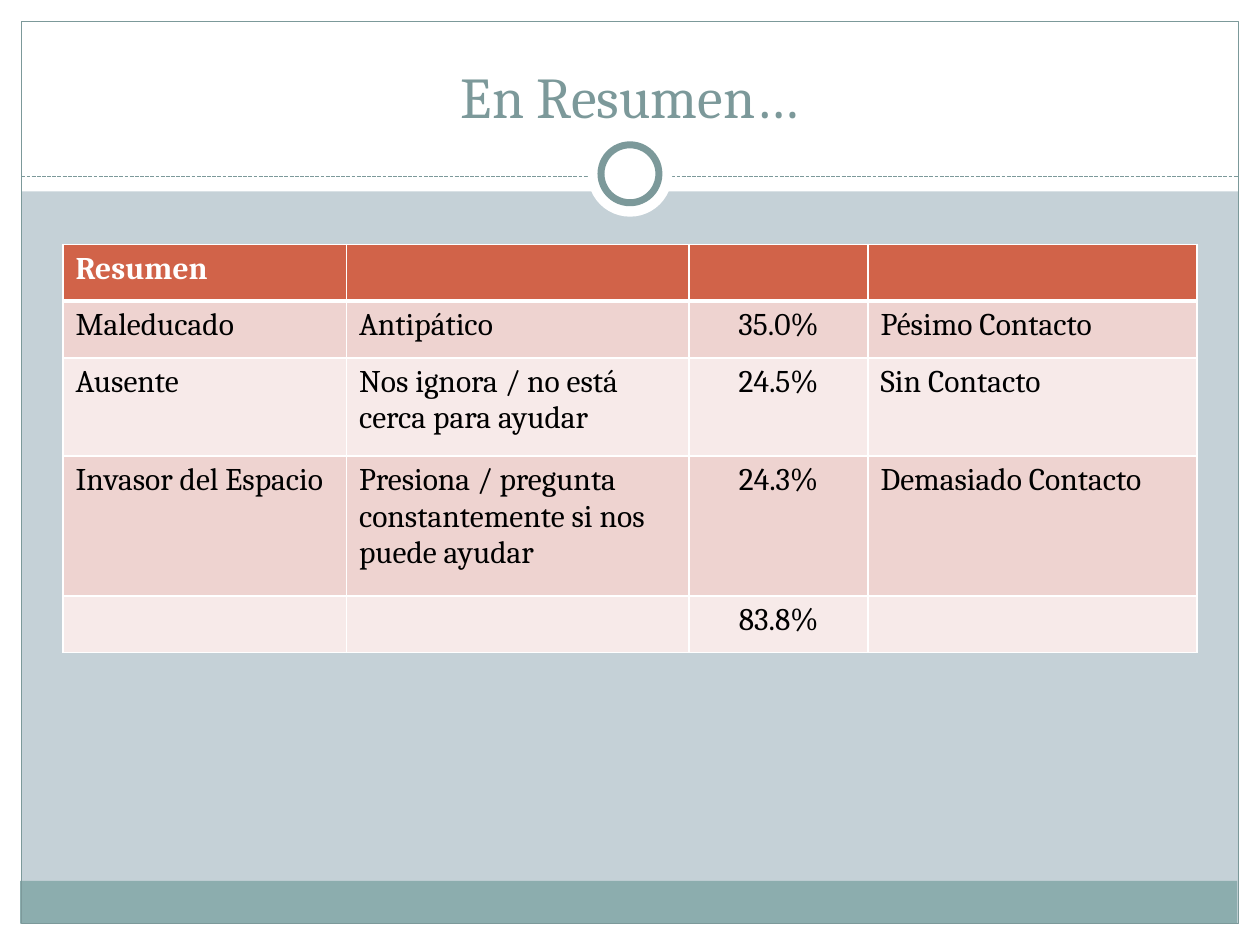
from dataclasses import dataclass
from lxml.etree import SubElement
from pptx import Presentation
from pptx.dml.color import RGBColor as RGB
from pptx.enum.dml import MSO_LINE_DASH_STYLE as DASH
from pptx.enum.shapes import MSO_CONNECTOR as CONN, MSO_SHAPE as SHAPE
from pptx.enum.text import MSO_ANCHOR as ANCHOR, PP_ALIGN as ALIGN
from pptx.oxml.ns import qn
from pptx.util import Inches, Pt


@dataclass(frozen=True)
class Theme:
    font: str = "Cambria"
    title_size: int = 33
    body_size: int = 18
    white: str = "FFFFFF"
    black: str = "000000"
    back: str = "C5D1D7"
    accent: str = "7C999A"
    footer: str = "8CADAE"
    header: str = "D16349"
    bands: tuple = ("EED3D0", "F7EAE9")


theme = Theme()
prs = Presentation()
prs.slide_width, prs.slide_height = Inches(10), Inches(7.5)
s = prs.slides.add_slide(prs.slide_layouts[6])
s.background.fill.solid()
s.background.fill.fore_color.rgb = RGB.from_string(theme.back)


def share(x, y, *size):
    sides = (prs.slide_width, prs.slide_height) * 2
    return [round(side * pct / 100) for side, pct in zip(sides, (x, y, *size))]


def style_run(r, size, color, bold=False):
    r.font.name, r.font.size, r.font.bold = theme.font, Pt(size), bold
    r.font.color.rgb = RGB.from_string(color)


shapes = [
    (SHAPE.RECTANGLE, (0, 97.73, 100, 2.27), theme.white, 0),
    (SHAPE.RECTANGLE, (0, 0, 100, 20.27), theme.white, 0),
    (SHAPE.RECTANGLE, (0, 0, 1.7, 100), theme.white, 0),
    (SHAPE.RECTANGLE, (98.3, 0, 1.7, 100), theme.white, 0),
    (SHAPE.RECTANGLE, (1.6, 93.2, 96.6, 4.53), theme.footer, 0),
    (SHAPE.RECTANGLE, (1.7, 2.27, 96.6, 95.47), None, 0.75),
    (SHAPE.OVAL, (46.65, 14, 6.7, 8.93), theme.white, 0),
    (SHAPE.OVAL, (47.7, 15.33, 4.6, 6.13), theme.white, 4),
]
for kind, place, color, width in shapes:
    if kind == SHAPE.OVAL and not width:
        rule = s.shapes.add_connector(CONN.STRAIGHT, *share(1.7, 18.67, 98.3, 18.67))
        rule.line.color.rgb = RGB.from_string(theme.accent)
        rule.line.width = Pt(0.75)
        rule.line.dash_style = DASH.SQUARE_DOT
        SubElement(rule._element.spPr, qn("a:effectLst"))
    sp = s.shapes.add_shape(kind, *share(*place))
    sp.shadow.inherit = False
    if color:
        sp.fill.solid()
        sp.fill.fore_color.rgb = RGB.from_string(color)
    else:
        sp.fill.background()
    if width:
        sp.line.color.rgb = RGB.from_string(theme.accent)
        sp.line.width = Pt(width)
    else:
        sp.line.fill.background()

title = s.shapes.add_textbox(*share(3.35, 3.33, 93.3, 11.07))
tf = title.text_frame
tf.word_wrap = True
tf.vertical_anchor = ANCHOR.BOTTOM
tf.text = "En Resumen…"
p = tf.paragraphs[0]
p.alignment = ALIGN.CENTER
style_run(p.runs[0], theme.title_size, theme.accent)

rows = [
    ("Resumen", "", "", ""),
    ("Maleducado", "Antipático", "35.0%", "Pésimo Contacto"),
    ("Ausente", "Nos ignora / no está cerca para ayudar", "24.5%", "Sin Contacto"),
    ("Invasor del Espacio", "Presiona / pregunta constantemente si nos puede ayudar",
     "24.3%", "Demasiado Contacto"),
    ("", "", "83.8%", ""),
]
col_shares = (22.5, 27.2, 14.2, 26.1)
row_shares = (6, 6, 10.4, 14.8, 6)
table = s.shapes.add_table(
    len(rows), len(col_shares), *share(5, 25.87, sum(col_shares), sum(row_shares))
).table
for col, width in zip(table.columns, col_shares):
    col.width = share(width, 0)[0]
for row, height in zip(table.rows, row_shares):
    row.height = share(0, height)[1]

for i, texts in enumerate(rows):
    is_header = i == 0
    for j, text in enumerate(texts):
        cell = table.cell(i, j)
        tc_pr = cell._tc.get_or_add_tcPr()
        for side in "LRTB":
            thick = (i, side) in ((0, "B"), (1, "T"))
            ln = SubElement(tc_pr, qn(f"a:ln{side}"), w=str(Pt(3 if thick else 1)))
            SubElement(SubElement(ln, qn("a:solidFill")), qn("a:srgbClr"), val=theme.white)
        cell.fill.solid()
        cell.fill.fore_color.rgb = RGB.from_string(
            theme.header if is_header else theme.bands[(i - 1) % 2])
        if text:
            cell.text_frame.text = text
            p = cell.text_frame.paragraphs[0]
            p.alignment = ALIGN.CENTER if j == 2 else ALIGN.LEFT
            style_run(p.runs[0], theme.body_size,
                      theme.white if is_header else theme.black, is_header)

prs.save("out.pptx")
